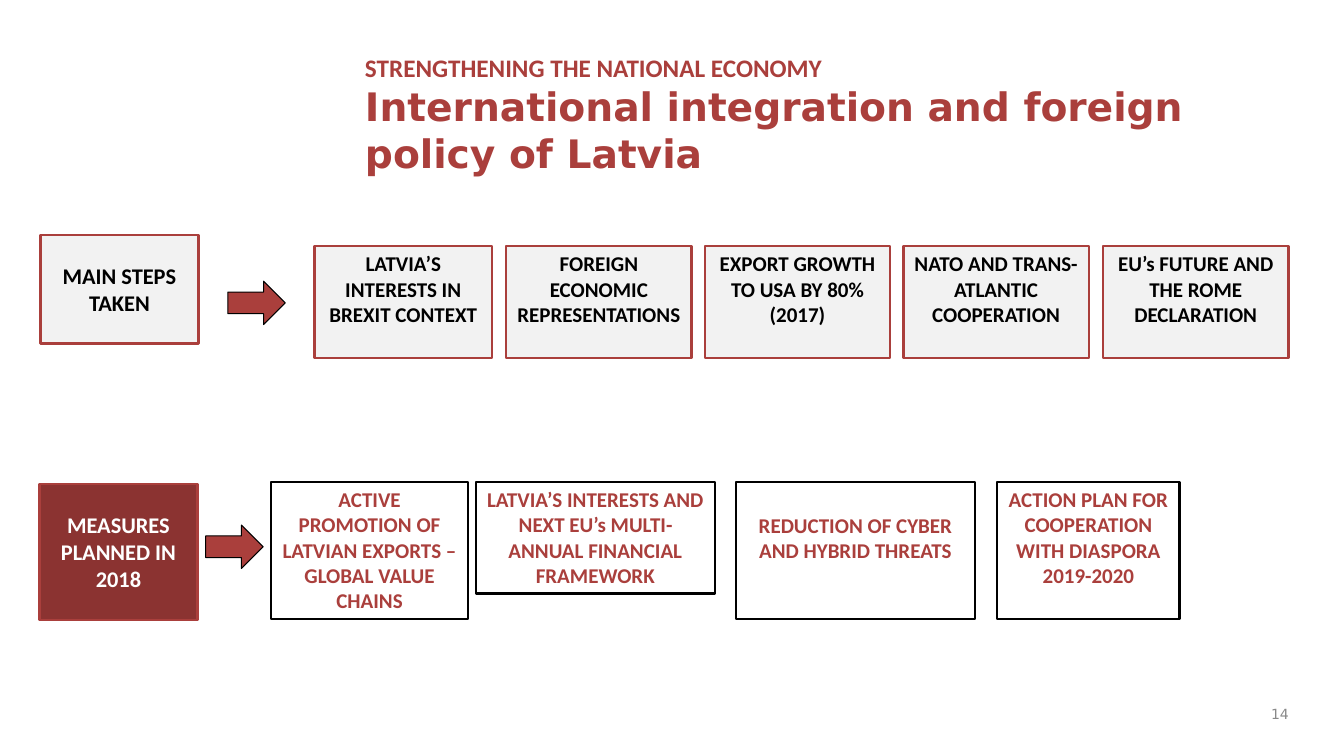
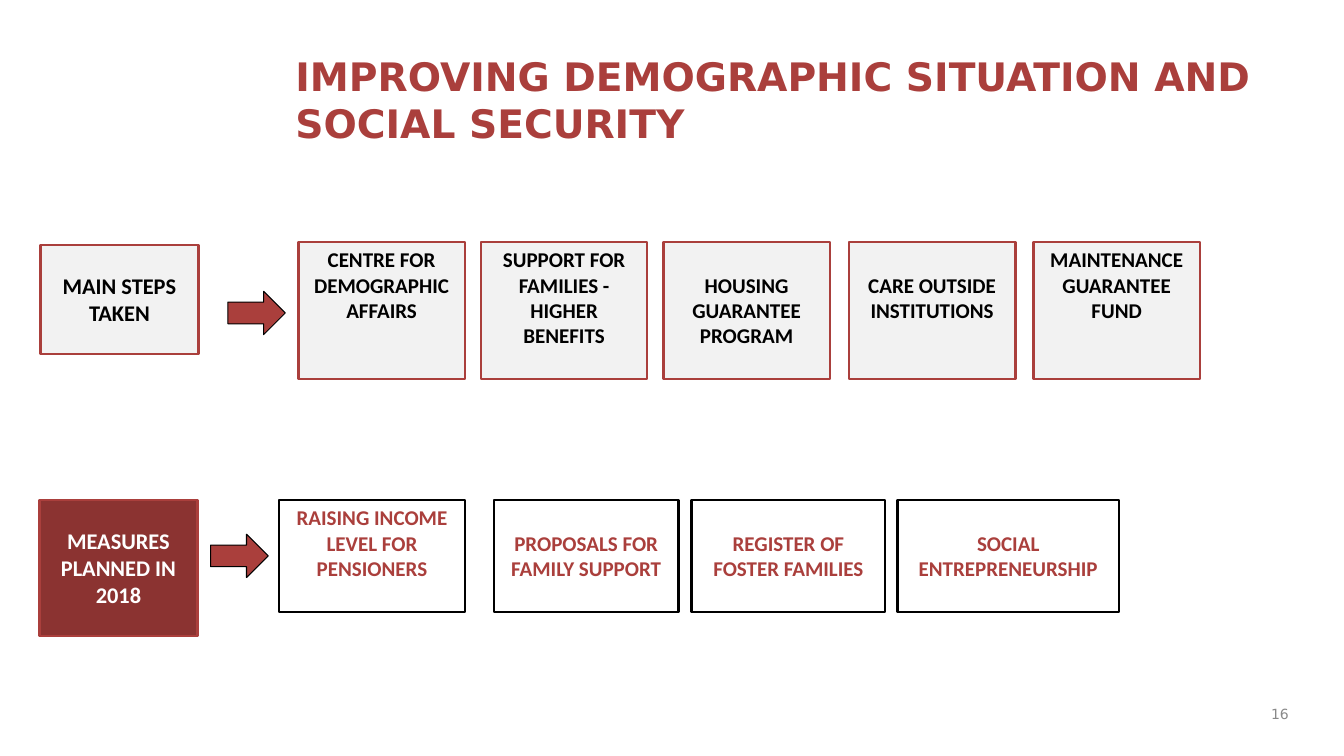
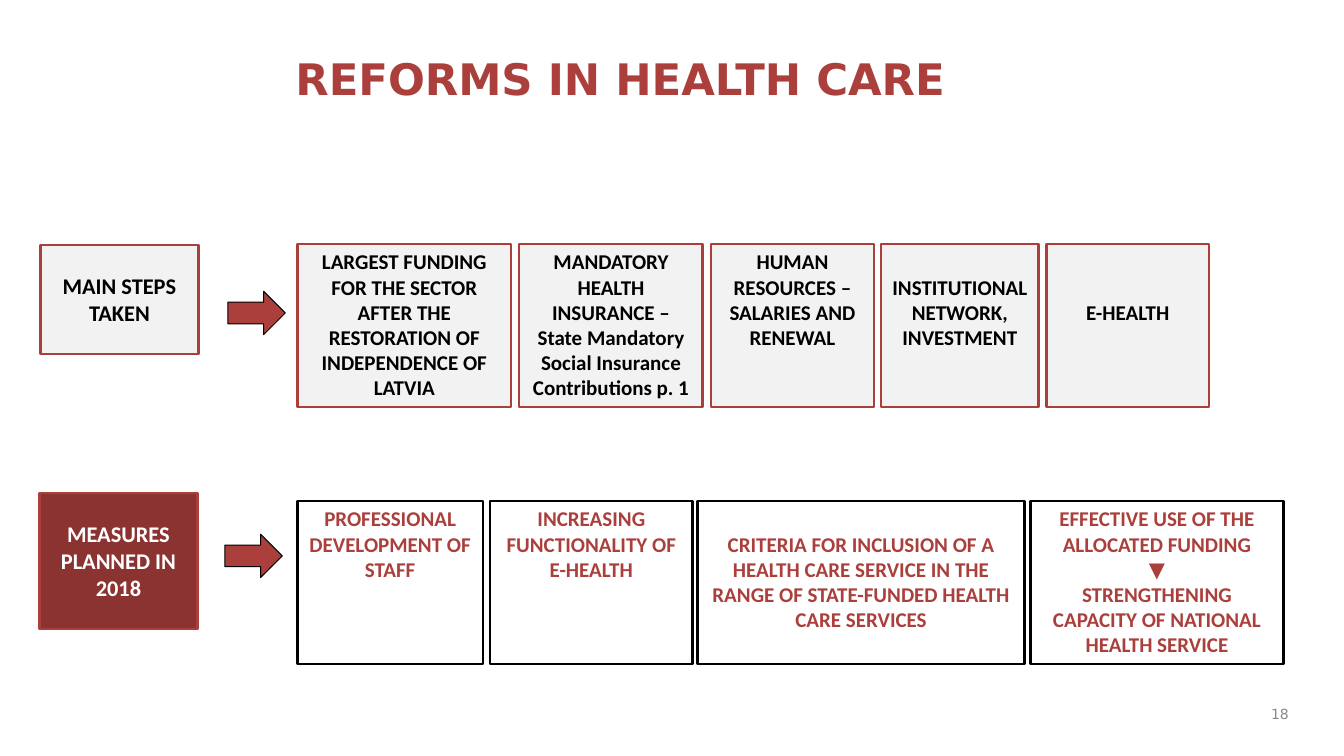
"""Build three slides on Latvia's main steps taken and measures planned."""
from pptx import Presentation
from pptx.dml.color import RGBColor
from pptx.enum.shapes import MSO_SHAPE
from pptx.enum.text import MSO_ANCHOR, MSO_AUTO_SIZE, PP_ALIGN
from pptx.util import Pt

RECTANGLE, ARROW = MSO_SHAPE.RECTANGLE, MSO_SHAPE.RIGHT_ARROW
TOP, MIDDLE = MSO_ANCHOR.TOP, MSO_ANCHOR.MIDDLE
LEFT, CENTER, RIGHT = PP_ALIGN.LEFT, PP_ALIGN.CENTER, PP_ALIGN.RIGHT
NO_AUTOFIT = MSO_AUTO_SIZE.NONE

PX = 9144
RED, DARK_RED, PALE = "AA3F3C", "8B3331", "F2F2F2"
BLACK, WHITE, GREY = "000000", "FFFFFF", "898989"
BODY_FONT, TITLE_FONT = "Calibri", "DejaVu Sans"
TITLE_TOP = 45
ARROW_SIZE = (57, 43)
LINE_HEIGHT = 25
LABEL_DROP = 22

ROW_STYLES = [
    {"label": ["MAIN STEPS TAKEN"], "label_left": 40, "label_height": 108,
     "label_fill": PALE, "label_color": BLACK,
     "box_fill": PALE, "box_line": RED, "box_color": BLACK},
    {"label": ["MEASURES PLANNED IN", "2018"], "label_left": 39, "label_height": 135,
     "label_fill": DARK_RED, "label_color": WHITE,
     "box_fill": WHITE, "box_line": BLACK, "box_color": RED},
]

# Row: label top, arrow left, arrow top, box top, boxes.
# Box: left, width, height, lines skipped above the text, paragraphs.
SLIDES = [
    {"number": "14", "title_left": 352, "title_width": 966, "title_height": 136,
     "title": [("STRENGTHENING THE NATIONAL ECONOMY", 18, BODY_FONT),
               ("International integration and foreign policy of Latvia", 28, TITLE_FONT)],
     "rows": [
         (233, 226, 279, 244, [
             (312, 176, 111, 0, ["LATVIA’S INTERESTS IN BREXIT CONTEXT"]),
             (502, 184, 111, 0, ["FOREIGN ECONOMIC REPRESENTATIONS"]),
             (699, 184, 111, 0, ["EXPORT GROWTH TO USA BY 80%", "(2017)"]),
             (896, 184, 111, 0, ["NATO AND TRANS- ATLANTIC COOPERATION"]),
             (1094, 184, 111, 0, ["EU’s FUTURE AND THE ROME DECLARATION"]),
         ]),
         (480, 204, 521, 478, [
             (269, 195, 136, 0, ["ACTIVE PROMOTION OF LATVIAN EXPORTS – GLOBAL VALUE CHAINS"]),
             (472, 237, 111, 0,
              ["LATVIA’S INTERESTS AND NEXT EU’s MULTI-ANNUAL FINANCIAL FRAMEWORK"]),
             (730, 237, 136, 1, ["REDUCTION OF CYBER AND HYBRID THREATS"]),
             (989, 181, 136, 0, ["ACTION PLAN FOR COOPERATION WITH DIASPORA", "2019-2020"]),
         ]),
     ]},
    {"number": "16", "title_left": 283, "title_width": 1035, "title_height": 93,
     "title": [("IMPROVING DEMOGRAPHIC SITUATION AND SOCIAL SECURITY", 28, TITLE_FONT)],
     "rows": [
         (243, 226, 289, 240, [
             (296, 165, 136, 0, ["CENTRE FOR DEMOGRAPHIC AFFAIRS"]),
             (477, 165, 136, 0, ["SUPPORT FOR FAMILIES - HIGHER BENEFITS"]),
             (658, 165, 136, 1, ["HOUSING GUARANTEE PROGRAM"]),
             (842, 165, 136, 1, ["CARE OUTSIDE INSTITUTIONS"]),
             (1025, 165, 136, 0, ["MAINTENANCE GUARANTEE FUND"]),
         ]),
         (496, 209, 530, 496, [
             (277, 184, 111, 0, ["RAISING INCOME LEVEL FOR PENSIONERS"]),
             (490, 183, 111, 1, ["PROPOSALS FOR FAMILY SUPPORT"]),
             (686, 192, 111, 1, ["REGISTER OF FOSTER FAMILIES"]),
             (890, 220, 111, 1, ["SOCIAL ENTREPRENEURSHIP"]),
         ]),
     ]},
    {"number": "18", "title_left": 283, "title_width": 1035, "title_height": 93,
     "title": [("REFORMS IN HEALTH CARE", 31, TITLE_FONT)],
     "rows": [
         (243, 226, 289, 242, [
             (295, 212, 162, 0, ["LARGEST FUNDING FOR THE SECTOR AFTER THE RESTORATION "
                                 "OF INDEPENDENCE OF LATVIA"]),
             (515, 182, 162, 0, ["MANDATORY HEALTH INSURANCE – State Mandatory "
                                 "Social Insurance Contributions p. 1"]),
             (705, 162, 162, 0, ["HUMAN RESOURCES – SALARIES AND RENEWAL"]),
             (874, 156, 162, 1, ["INSTITUTIONAL NETWORK, INVESTMENT"]),
             (1038, 161, 162, 2, ["E-HEALTH"]),
         ]),
         (489, 223, 530, 497, [
             (295, 184, 162, 0, ["PROFESSIONAL DEVELOPMENT OF STAFF"]),
             (486, 201, 162, 0, ["INCREASING FUNCTIONALITY OF E-HEALTH"]),
             (692, 324, 162, 1, ["CRITERIA FOR INCLUSION OF A HEALTH CARE SERVICE IN THE "
                                 "RANGE OF STATE-FUNDED HEALTH CARE SERVICES"]),
             (1022, 251, 162, 0, ["EFFECTIVE USE OF THE ALLOCATED FUNDING", "▼",
                                  "STRENGTHENING CAPACITY OF NATIONAL HEALTH SERVICE"]),
         ]),
     ]},
]


def add_run(paragraph, text, size, font, color, bold=True):
    run = paragraph.add_run()
    run.text = text
    run.font.size = Pt(size)
    run.font.name = font
    run.font.bold = bold
    run.font.color.rgb = RGBColor.from_string(color)


def add_box(slide, kind, place, fill, line, weight, paragraphs=(), size=15, color=BLACK, drop=0):
    shape = slide.shapes.add_shape(kind, *[length * PX for length in place])
    shape.shadow.inherit = False
    shape.fill.solid()
    shape.fill.fore_color.rgb = RGBColor.from_string(fill)
    shape.line.color.rgb = RGBColor.from_string(line)
    shape.line.width = Pt(weight)
    frame = shape.text_frame
    frame.word_wrap = True
    frame.vertical_anchor = TOP
    frame.margin_left = frame.margin_right = 9 * PX
    frame.margin_top = (5 + drop) * PX
    frame.margin_bottom = 0
    for index, text in enumerate(paragraphs):
        paragraph = frame.add_paragraph() if index else frame.paragraphs[0]
        paragraph.alignment = CENTER
        add_run(paragraph, text, size, BODY_FONT, color)


presentation = Presentation()
presentation.slide_width = 1333 * PX
presentation.slide_height = 750 * PX
title_only = presentation.slide_layouts[5]

for content in SLIDES:
    slide = presentation.slides.add_slide(title_only)

    title = slide.shapes.title
    title.left, title.top = content["title_left"] * PX, TITLE_TOP * PX
    title.width, title.height = content["title_width"] * PX, content["title_height"] * PX
    frame = title.text_frame
    frame.word_wrap = True
    frame.auto_size = NO_AUTOFIT
    frame.vertical_anchor = TOP
    frame.margin_top = 7 * PX
    paragraph = frame.paragraphs[0]
    paragraph.alignment = LEFT
    for index, (text, size, font) in enumerate(content["title"]):
        if index:
            paragraph.add_line_break()
        add_run(paragraph, text, size, font, RED)

    number = slide.shapes.add_textbox(1244 * PX, 692 * PX, 44 * PX, 33 * PX)
    number.text_frame.word_wrap = True
    number.text_frame.vertical_anchor = MIDDLE
    paragraph = number.text_frame.paragraphs[0]
    paragraph.alignment = RIGHT
    add_run(paragraph, content["number"], 10, TITLE_FONT, GREY, bold=False)

    for style, row in zip(ROW_STYLES, content["rows"]):
        label_top, arrow_left, arrow_top, box_top, boxes = row
        label_place = (style["label_left"], label_top, 157, style["label_height"])
        add_box(slide, RECTANGLE, label_place, style["label_fill"], RED, 1.75,
                style["label"], 16, style["label_color"], LABEL_DROP)
        add_box(slide, ARROW, (arrow_left, arrow_top, *ARROW_SIZE), RED, BLACK, 0.75)
        for left, width, height, skipped, paragraphs in boxes:
            add_box(slide, RECTANGLE, (left, box_top, width, height), style["box_fill"],
                    style["box_line"], 1.75, paragraphs, 15, style["box_color"],
                    skipped * LINE_HEIGHT)

presentation.save("out.pptx")
